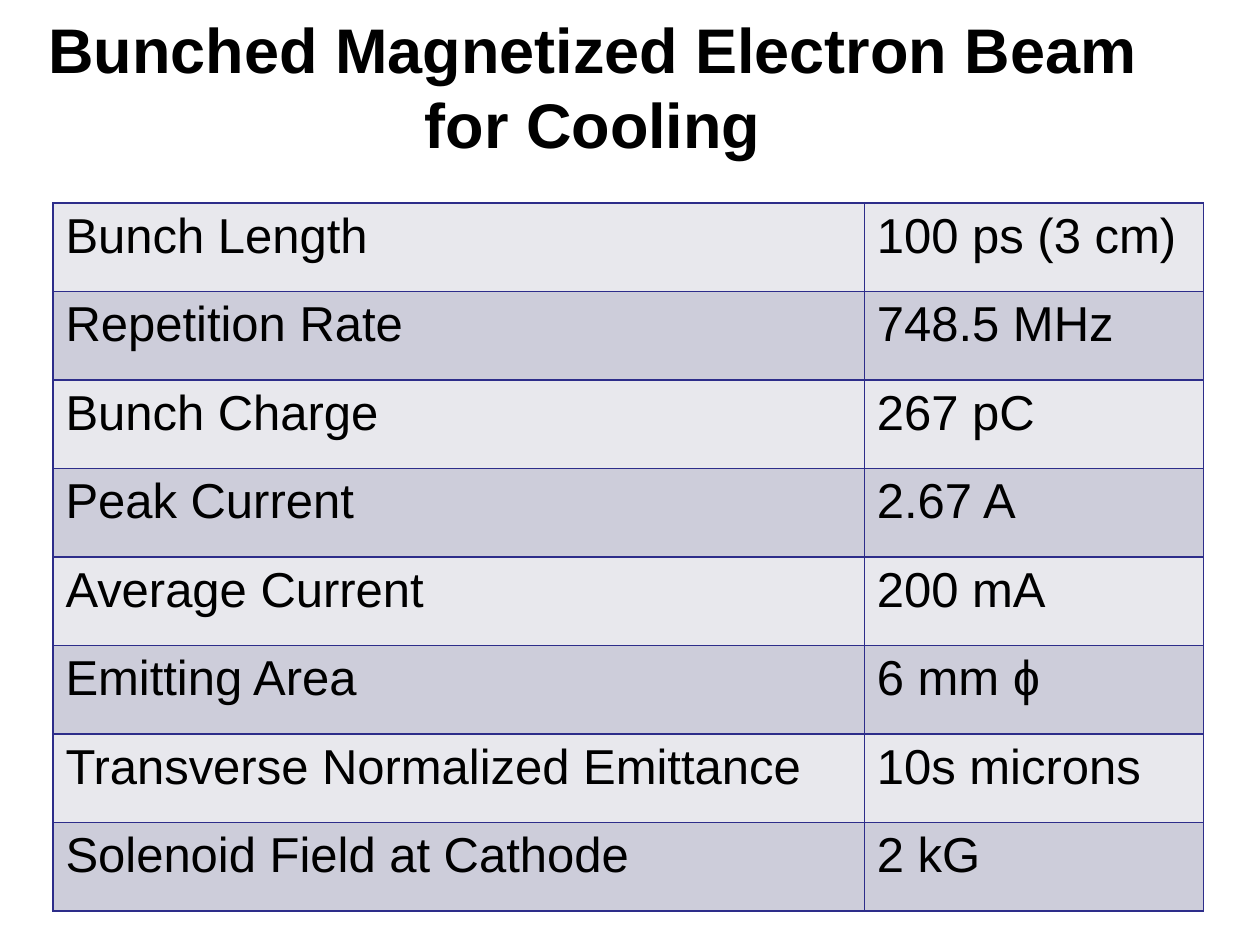
from typing import NamedTuple

from lxml.etree import SubElement
from pptx import Presentation
from pptx.dml.color import RGBColor
from pptx.enum.text import MSO_ANCHOR as Anchor, MSO_AUTO_SIZE as AutoSize, PP_ALIGN as Align
from pptx.oxml.ns import qn
from pptx.util import Inches, Pt

FONT = "Arial"
TEXT = "000000"
BORDER = "2D2D8A"
BANDS = ("E8E8ED", "CDCDDA")
COLUMN_WIDTHS = (6.44, 2.69)
TABLE_HEIGHT = 5.62


class Parameter(NamedTuple):
    name: str
    value: str


PARAMETERS = (
    Parameter("Bunch Length", "100 ps (3 cm)"),
    Parameter("Repetition Rate", "748.5 MHz"),
    Parameter("Bunch Charge", "267 pC"),
    Parameter("Peak Current", "2.67 A"),
    Parameter("Average Current", "200 mA"),
    Parameter("Emitting Area", "6 mm ɸ"),
    Parameter("Transverse Normalized Emittance", "10s microns"),
    Parameter("Solenoid Field at Cathode", "2 kG"),
)


def color(value: str) -> RGBColor:
    return RGBColor.from_string(value)


def format_font(font, size: float, bold: bool = False) -> None:
    font.name = FONT
    font.size = Pt(size)
    font.bold = bold
    font.color.rgb = color(TEXT)


def add_borders(cell) -> None:
    """Outline all four sides; the lines must precede the cell's fill."""
    properties = cell._tc.get_or_add_tcPr()
    for side in ("lnL", "lnR", "lnT", "lnB"):
        line = SubElement(properties, qn(f"a:{side}"), w=str(Pt(1)))
        fill = SubElement(line, qn("a:solidFill"))
        SubElement(fill, qn("a:srgbClr"), val=BORDER)


def add_title(page, text: str) -> None:
    title = page.shapes.title
    title.left, title.top = Inches(0.16), Inches(0)
    title.width, title.height = Inches(9.09), Inches(1.36)
    frame = title.text_frame
    frame.text = text
    frame.word_wrap = True
    frame.auto_size = AutoSize.NONE
    frame.vertical_anchor = Anchor.MIDDLE
    para = frame.paragraphs[0]
    para.alignment = Align.CENTER
    format_font(para.font, 36, bold=True)


def add_parameter_table(page, parameters: tuple[Parameter, ...]) -> None:
    table = page.shapes.add_table(
        len(parameters), len(COLUMN_WIDTHS), Inches(0.42), Inches(1.61),
        Inches(sum(COLUMN_WIDTHS)), Inches(TABLE_HEIGHT),
    ).table
    table.first_row = False
    table.horz_banding = False
    for column, width in zip(table.columns, COLUMN_WIDTHS):
        column.width = Inches(width)
    for index, (row, parameter) in enumerate(zip(table.rows, parameters)):
        for cell, text in zip(row.cells, parameter):
            add_borders(cell)
            cell.fill.solid()
            cell.fill.fore_color.rgb = color(BANDS[index % 2])
            cell.text = text
            format_font(cell.text_frame.paragraphs[0].font, 28)


def main() -> None:
    deck = Presentation()
    deck.slide_width, deck.slide_height = Inches(10), Inches(7.5)
    page = deck.slides.add_slide(deck.slide_layouts[5])
    add_title(page, "Bunched Magnetized Electron Beam for Cooling")
    add_parameter_table(page, PARAMETERS)
    deck.save("out.pptx")


if __name__ == "__main__":
    main()
